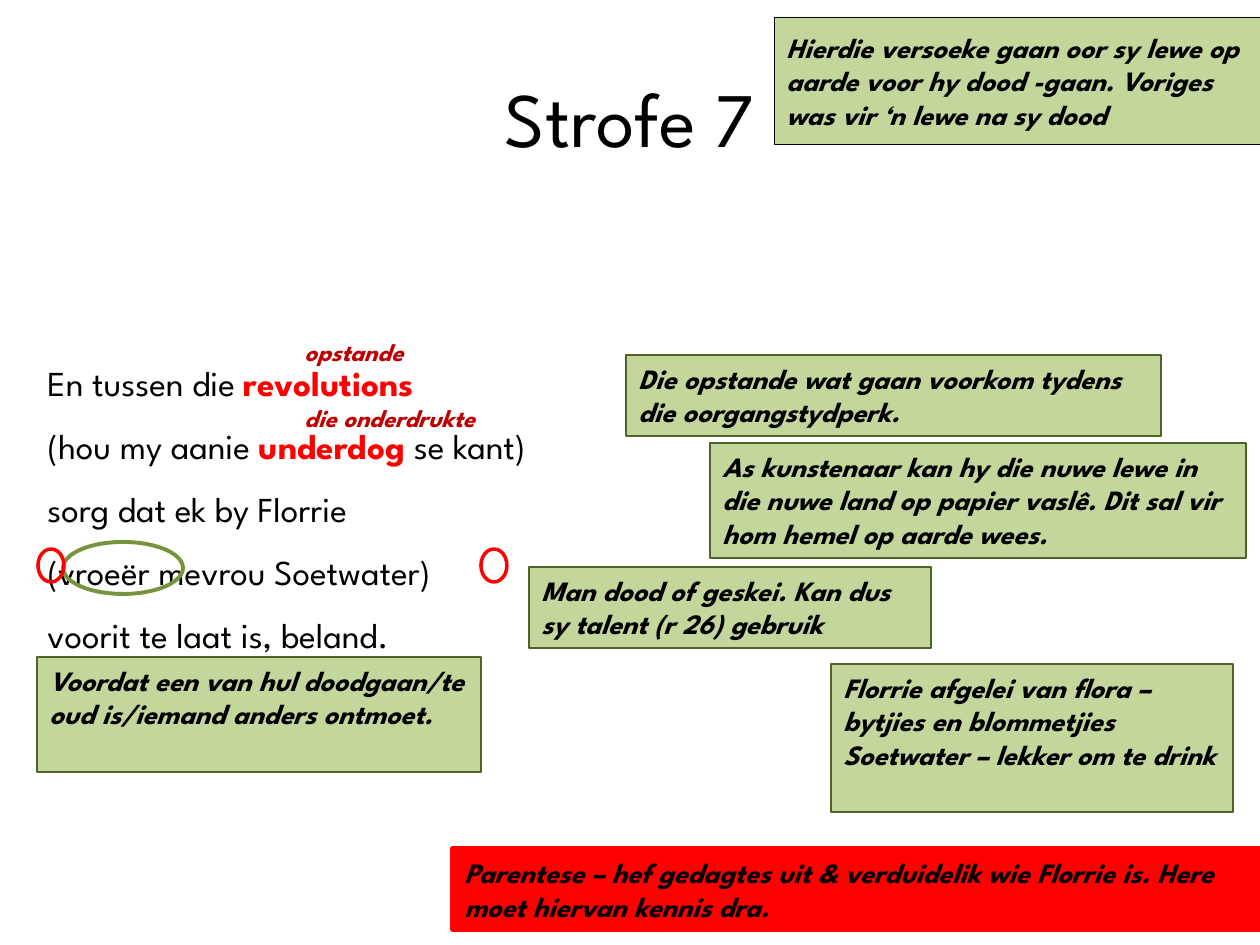
from dataclasses import dataclass

from pptx import Presentation
from pptx.dml.color import RGBColor
from pptx.enum.shapes import MSO_SHAPE
from pptx.enum.text import MSO_ANCHOR, PP_ALIGN
from pptx.util import Emu, Pt

RECTANGLE, OVAL = MSO_SHAPE.RECTANGLE, MSO_SHAPE.OVAL
TOP, MIDDLE = MSO_ANCHOR.TOP, MSO_ANCHOR.MIDDLE
LEFT, CENTER = PP_ALIGN.LEFT, PP_ALIGN.CENTER
PX_PER_INCH = 126


@dataclass(frozen=True)
class Theme:
    font: str = "League Spartan"
    ink: str = "000000"
    red: str = "FF0000"
    gloss: str = "C00000"
    note_fill: str = "C3D69B"
    note_line: str = "4F6228"
    ring: str = "77933C"
    title_size: int = 44
    verse_size: int = 20
    note_size: int = 16
    gloss_size: int = 14


THEME = Theme()


@dataclass(frozen=True)
class Box:
    left: int
    top: int
    width: int
    height: int


@dataclass(frozen=True)
class Note:
    box: Box
    lines: tuple[str, ...]
    fill: str = THEME.note_fill
    line: str = THEME.note_line
    line_width: float = 0.75
    anchor: MSO_ANCHOR = TOP


@dataclass(frozen=True)
class Ring:
    box: Box
    color: str
    width: float


@dataclass(frozen=True)
class Verse:
    before: str
    stressed: str = ""
    after: str = ""


TITLE_BOX = Box(63, 38, 1134, 157)
POEM_BOX = Box(35, 334, 1181, 331)
GLOSS_BOX = Box(292, 316, 400, 127)

POEM = (
    Verse("En tussen die ", "revolutions"),
    Verse("(hou my aanie ", "underdog", " se kant)"),
    Verse("sorg dat ek by Florrie"),
    Verse("(vroeër mevrou Soetwater)"),
    Verse("voorit te laat is, beland."),
)
GLOSSES = ("opstande", "die onderdrukte")

NOTES = (
    Note(Box(710, 443, 536, 115),
         ("As kunstenaar kan hy die nuwe lewe in die nuwe land op papier vaslê. "
          "Dit sal vir hom hemel op aarde wees.",)),
    Note(Box(626, 355, 535, 81),
         ("Die opstande wat gaan voorkom tydens die oorgangstydperk.",)),
    Note(Box(774, 17, 486, 127),
         ("Hierdie versoeke gaan oor sy lewe op aarde voor hy dood -gaan. "
          "Voriges was vir ‘n lewe na sy dood",),
         line=THEME.ink, line_width=0.25, anchor=MIDDLE),
    Note(Box(529, 567, 402, 81),
         ("Man dood of geskei. Kan dus sy talent (r 26) gebruik",)),
    Note(Box(37, 657, 444, 115),
         ("Voordat een van hul doodgaan/te oud is/iemand anders ontmoet.",)),
    Note(Box(452, 848, 808, 82),
         ("Parentese – hef gedagtes uit & verduidelik wie Florrie is. "
          "Here moet hiervan kennis dra.",),
         fill=THEME.red, line=THEME.red, line_width=2, anchor=MIDDLE),
    Note(Box(831, 664, 402, 148),
         ("Florrie afgelei van flora – bytjies en blommetjies",
          "Soetwater – lekker om te drink")),
)

RINGS = (
    Ring(Box(63, 542, 120, 52), THEME.ring, 2.25),
    Ring(Box(481, 549, 26, 33), THEME.red, 2),
    Ring(Box(38, 549, 26, 33), THEME.red, 2),
)


def px(length: int) -> Emu:
    return Emu(round(length * 914400 / PX_PER_INCH))


def place(box: Box) -> tuple[Emu, Emu, Emu, Emu]:
    return px(box.left), px(box.top), px(box.width), px(box.height)


def style(font, size: int, color: str = THEME.ink, slanted_bold: bool = False) -> None:
    font.name = THEME.font
    font.size = Pt(size)
    font.color.rgb = RGBColor.from_string(color)
    font.bold = font.italic = slanted_bold


def add_paragraphs(frame, count: int) -> list:
    return [frame.paragraphs[0]] + [frame.add_paragraph() for _ in range(count - 1)]


def write(frame, lines: tuple[str, ...], size: int, color: str = THEME.ink,
          slanted_bold: bool = False, anchor: MSO_ANCHOR = TOP,
          align: PP_ALIGN = LEFT) -> list:
    frame.word_wrap = True
    frame.vertical_anchor = anchor
    paragraphs = add_paragraphs(frame, len(lines))
    for paragraph, line in zip(paragraphs, lines):
        paragraph.text = line
        paragraph.alignment = align
        style(paragraph.font, size, color, slanted_bold)
    return paragraphs


def add_poem(slide) -> None:
    frame = slide.shapes.add_textbox(*place(POEM_BOX)).text_frame
    frame.word_wrap = True
    for paragraph, verse in zip(add_paragraphs(frame, len(POEM)), POEM):
        paragraph.line_spacing = 1.5
        style(paragraph.font, THEME.verse_size)
        for words in filter(None, (verse.before, verse.stressed, verse.after)):
            run = paragraph.add_run()
            run.text = words
            if words == verse.stressed:
                run.font.bold = True
                run.font.color.rgb = RGBColor.from_string(THEME.red)


def add_glosses(slide) -> None:
    frame = slide.shapes.add_textbox(*place(GLOSS_BOX)).text_frame
    paragraphs = write(frame, GLOSSES, THEME.gloss_size, THEME.gloss, True)
    for paragraph in paragraphs:
        paragraph.line_spacing = 1.5
    paragraphs[-1].space_before = Pt(12.6)


def add_outlined(slide, kind: MSO_SHAPE, box: Box, color: str, width: float):
    shape = slide.shapes.add_shape(kind, *place(box))
    shape.shadow.inherit = False
    shape.line.color.rgb = RGBColor.from_string(color)
    shape.line.width = Pt(width)
    return shape


def add_note(slide, note: Note) -> None:
    shape = add_outlined(slide, RECTANGLE, note.box, note.line, note.line_width)
    shape.fill.solid()
    shape.fill.fore_color.rgb = RGBColor.from_string(note.fill)
    write(shape.text_frame, note.lines, THEME.note_size,
          slanted_bold=True, anchor=note.anchor)


def add_ring(slide, ring: Ring) -> None:
    add_outlined(slide, OVAL, ring.box, ring.color, ring.width).fill.background()


def main() -> None:
    deck = Presentation()
    deck.slide_width, deck.slide_height = px(1260), px(945)
    slide = deck.slides.add_slide(deck.slide_layouts[6])
    title = slide.shapes.add_textbox(*place(TITLE_BOX))
    write(title.text_frame, ("Strofe 7",), THEME.title_size,
          anchor=MIDDLE, align=CENTER)
    add_poem(slide)
    add_glosses(slide)
    for note in NOTES:
        add_note(slide, note)
    for ring in RINGS:
        add_ring(slide, ring)
    deck.save("out.pptx")


if __name__ == "__main__":
    main()
